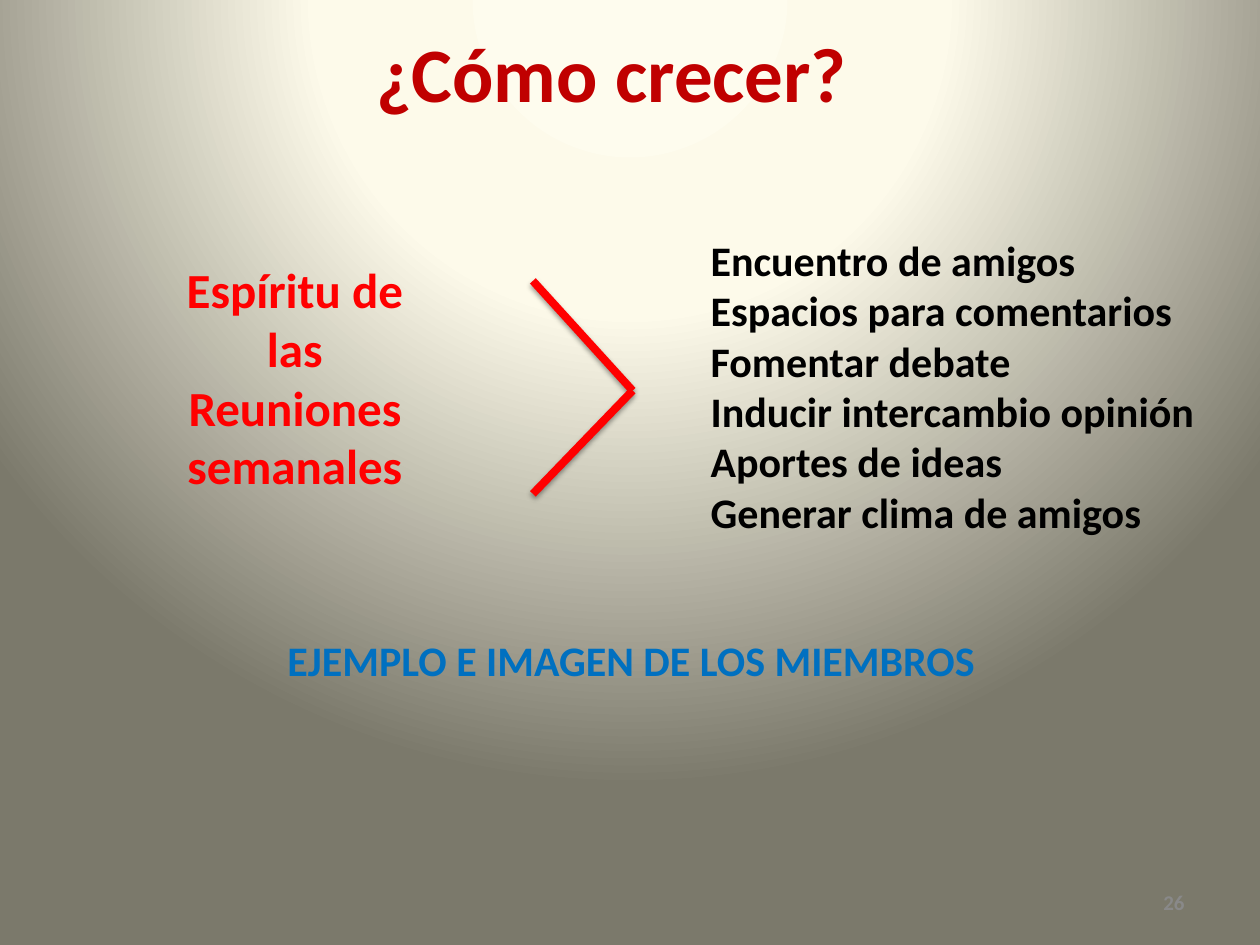
"""Build the slide on how a club can grow through its weekly meetings."""
from itertools import pairwise

from pptx import Presentation
from pptx.dml.color import RGBColor
from pptx.enum.shapes import MSO_CONNECTOR as Connector
from pptx.enum.text import MSO_ANCHOR as Anchor, MSO_AUTO_SIZE as AutoSize, PP_ALIGN as Align
from pptx.oxml import parse_xml
from pptx.oxml.ns import nsdecls
from pptx.util import Pt

FONT = "Calibri"
TITLE = ["¿Cómo crecer?"]
TOPIC = ["Espíritu de las Reuniones semanales"]
ACTIONS = [
    "Encuentro de amigos",
    "Espacios para comentarios",
    "Fomentar debate",
    "Inducir intercambio opinión",
    "Aportes de ideas",
    "Generar clima de amigos",
]
SLOGAN = ["EJEMPLO E IMAGEN DE LOS MIEMBROS"]
NUMBER = ["26"]
CHEVRON = [(304.5, 160.5), (361.5, 223.2), (304.5, 282.2)]
BACKGROUND = [(0, "FEFCEE"), (40, "FDFAEA"), (100, "7B796B")]


def color(value):
    return RGBColor.from_string(value)


def write(box, place, lines, size, tint, align=Align.CENTER, wrap=False):
    box.left, box.top, box.width, box.height = map(Pt, place)
    frame = box.text_frame
    frame.word_wrap = wrap
    frame.auto_size = AutoSize.NONE
    frame.vertical_anchor = Anchor.TOP
    for index, line in enumerate(lines):
        para = frame.add_paragraph() if index else frame.paragraphs[0]
        properties = para._p.get_or_add_pPr()
        properties.set("marL", "0")
        properties.set("indent", "0")
        properties.append(parse_xml(f"<a:buNone {nsdecls('a')}/>"))
        para.alignment = align
        para.space_before = Pt(0)
        span = para.add_run()
        span.text = line
        span.font.name = FONT
        span.font.size = Pt(size)
        span.font.bold = True
        span.font.color.rgb = color(tint)


def paint_background(page):
    stops = "".join(
        f'<a:gs pos="{position * 1000}"><a:srgbClr val="{tint}"/></a:gs>'
        for position, tint in BACKGROUND
    )
    page._element.cSld.insert(0, parse_xml(
        f'<p:bg {nsdecls("p", "a")}><p:bgPr><a:gradFill rotWithShape="1">'
        f'<a:gsLst>{stops}</a:gsLst><a:path path="circle">'
        '<a:fillToRect l="50000" t="-80000" r="50000" b="180000"/></a:path>'
        '</a:gradFill><a:effectLst/></p:bgPr></p:bg>'
    ))


def draw_chevron(page):
    group = page.shapes.add_group_shape()
    for start, end in pairwise(CHEVRON):
        stroke = group.shapes.add_connector(Connector.STRAIGHT, *map(Pt, start + end))
        stroke.line.color.rgb = color("FF0000")
        stroke.line.width = Pt(4.5)
        stroke._element.spPr.append(parse_xml(
            f'<a:effectLst {nsdecls("a")}><a:outerShdw blurRad="{Pt(3.1)}" '
            f'dist="{Pt(1.6)}" dir="5400000" rotWithShape="0"><a:srgbClr val="000000">'
            '<a:alpha val="38000"/></a:srgbClr></a:outerShdw></a:effectLst>'
        ))


def add_box(page):
    return page.shapes.add_textbox(0, 0, 0, 0)


def main():
    deck = Presentation()
    deck.slide_width, deck.slide_height = Pt(720), Pt(540)
    page = deck.slides.add_slide(deck.slide_layouts[1])
    paint_background(page)
    title, body = page.placeholders
    write(title, (207.4, 10.8, 284.4, 60.5), TITLE, 44, "C00000")
    write(add_box(page), (92.9, 144.7, 151.2, 143.3), TOPIC, 28, "FF0000", wrap=True)
    write(body, (398.9, 130.3, 293, 181.4), ACTIONS, 24, "000000", Align.LEFT)
    write(add_box(page), (162, 359.3, 397.4, 36), SLOGAN, 24, "0070C0")
    write(add_box(page), (516, 504.5, 168, 24), NUMBER, 12, "898989", Align.RIGHT, True)
    draw_chevron(page)
    deck.save("out.pptx")


if __name__ == "__main__":
    main()
